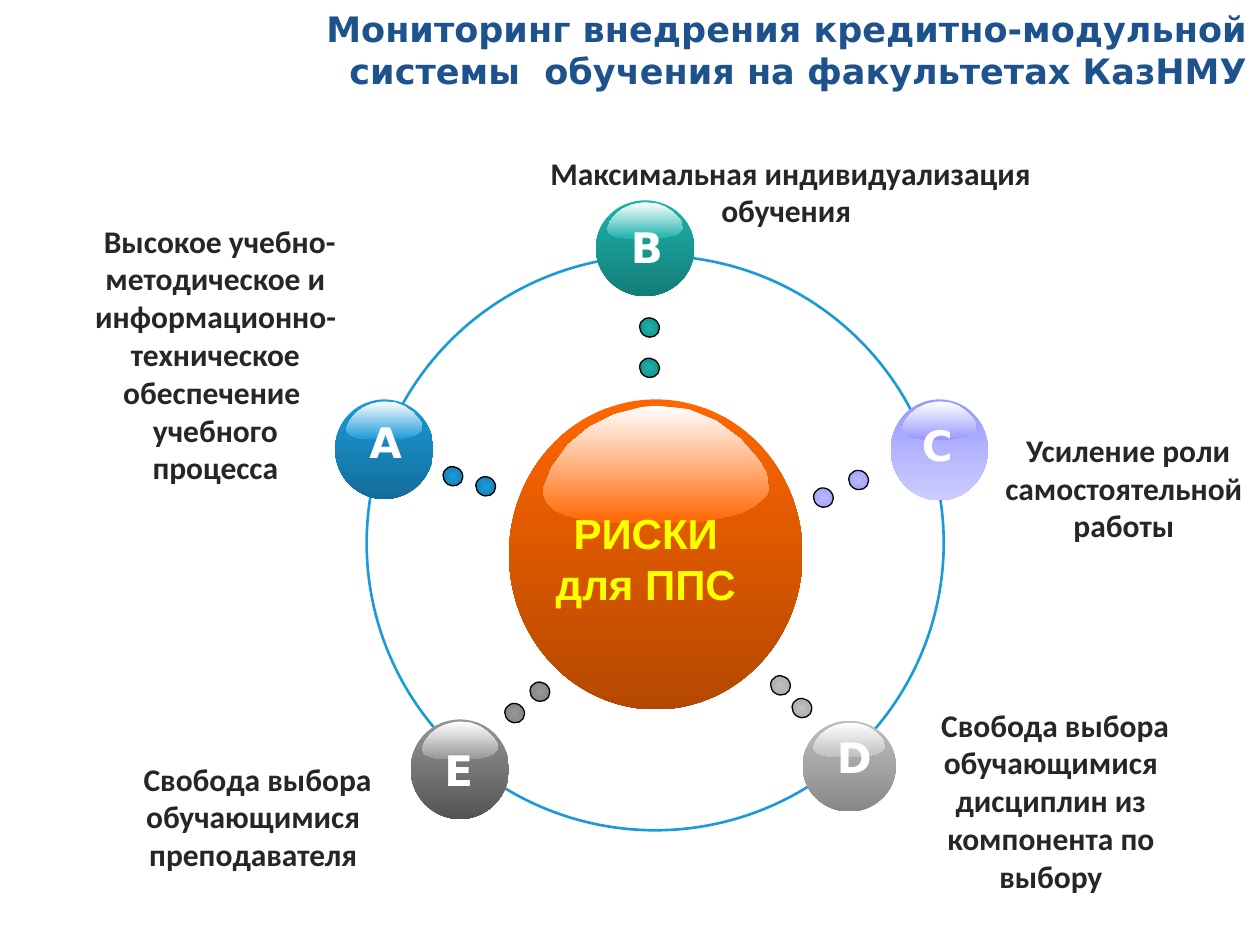
"""Builds a slide with a ring of five lettered benefits around the central risks sphere."""
from lxml.etree import SubElement
from pptx import Presentation
from pptx.dml.color import RGBColor
from pptx.enum.shapes import MSO_SHAPE
from pptx.enum.text import MSO_ANCHOR, PP_ALIGN
from pptx.oxml.ns import qn
from pptx.util import Inches, Pt

NAVY = RGBColor(0x1D, 0x52, 0x8D)
BLUE = RGBColor(0x1B, 0x9A, 0xD9)
TEAL = RGBColor(0x1D, 0xB3, 0xAC)
LILAC = RGBColor(0x99, 0x99, 0xFF)
PALE_LILAC = RGBColor(0xCC, 0xCC, 0xFF)
SOFT_LILAC = RGBColor(0xB9, 0xB9, 0xFF)
SILVER = RGBColor(0xC0, 0xC0, 0xC0)
GRAY = RGBColor(0x96, 0x96, 0x96)
ORANGE = RGBColor(0xFF, 0x66, 0x00)
YELLOW = RGBColor(0xFF, 0xFF, 0x00)
INK = RGBColor(0x26, 0x26, 0x26)
WHITE = RGBColor(0xFF, 0xFF, 0xFF)
BLACK = RGBColor(0, 0, 0)

TITLE = "Мониторинг внедрения кредитно-модульной системы  обучения на факультетах КазНМУ"
CENTER_LINES = ["РИСКИ", "для ППС"]
RING = (2.91, 2.03, 4.58, 4.56)
CORE = (4.04, 3.17, 2.33, 2.46)
CORE_TEXT = (4.3, 3.98, 1.65, 0.91)
DOT_SIZE = (0.15, 0.16)
DOT_ROTATION = 303.8

# stops are (colour, shade percent)
BENEFITS = [
    dict(letter="A", text="Высокое учебно-методическое и информационно-техническое обеспечение  учебного процесса",
         text_box=(0.63, 1.71, 2.16, 2.52), sphere=(2.66, 3.17, 0.78, 0.79),
         letter_box=(2.82, 3.26, 0.48, 0.53), stops=[(BLUE, 100), (BLUE, 46)],
         dot_stops=[(BLUE, 100), (BLUE, 55)], dots=[(3.52, 3.7), (3.78, 3.78)]),
    dict(letter="B", text="Максимальная индивидуализация обучения",
         text_box=(4.04, 1.17, 4.4, 1.01), sphere=(4.73, 1.59, 0.78, 0.76),
         letter_box=(4.9, 1.71, 0.47, 0.53), stops=[(TEAL, 100), (TEAL, 44)],
         dot_stops=[(TEAL, 100), (TEAL, 49)], dots=[(5.08, 2.52), (5.08, 2.84)]),
    dict(letter="C", text="Усиление роли самостоятельной работы",
         text_box=(7.84, 3.37, 2.16, 1.31), sphere=(7.07, 3.17, 0.77, 0.8),
         letter_box=(7.21, 3.28, 0.46, 0.53), stops=[(LILAC, 100), (PALE_LILAC, 100)],
         dot_stops=[(SOFT_LILAC, 100), (LILAC, 100)], dots=[(6.74, 3.73), (6.46, 3.87)]),
    dict(letter="D", text="Свобода выбора обучающимися дисциплин из компонента по выбору",
         text_box=(7.15, 5.55, 2.38, 1.92), sphere=(6.37, 5.72, 0.74, 0.72),
         letter_box=(6.53, 5.76, 0.5, 0.53), stops=[(SILVER, 100), (SILVER, 46)],
         dot_stops=[(SILVER, 100), (SILVER, 68)], dots=[(6.29, 5.54), (6.12, 5.36)]),
    dict(letter="E", text="Свобода выбора обучающимися преподавателя",
         text_box=(0.93, 5.98, 2.16, 1.01), sphere=(3.26, 5.71, 0.78, 0.79),
         letter_box=(3.42, 5.86, 0.44, 0.53), stops=[(GRAY, 100), (GRAY, 27)],
         dot_stops=[(GRAY, 100), (GRAY, 68)], dots=[(4.01, 5.58), (4.21, 5.41)]),
]

GLOSS_SIZE = (180, 93)
GLOSS_OUTLINE = [
    (178, 53), (180, 63), (180, 68), (177, 72), (169, 79), (157, 85), (141, 89),
    (123, 92), (109, 93), (65, 93), (48, 92), (32, 90), (20, 87), (10, 83),
    (3, 76), (0, 69), (1, 64), (7, 49), (20, 31), (37, 17), (57, 7), (80, 1),
    (91, 0), (116, 3), (138, 12), (157, 26), (172, 43),
]


def inches(box):
    return [Inches(length) for length in box]


def fill_gradient(shape, stops, radial=False):
    shape.fill.gradient()
    gradient = shape._element.spPr.find(qn("a:gradFill"))
    for child in list(gradient):
        gradient.remove(child)
    stop_list = SubElement(gradient, qn("a:gsLst"))
    for position, (color, shade) in zip((0, 100000), stops):
        stop = SubElement(stop_list, qn("a:gs"), pos=str(position))
        tone = SubElement(stop, qn("a:srgbClr"), val=str(color))
        if shade < 100:
            SubElement(tone, qn("a:shade"), val=str(shade * 1000))
    if radial:
        focus = SubElement(gradient, qn("a:path"), path="shape")
        SubElement(focus, qn("a:fillToRect"), l="50000", t="50000", r="50000", b="50000")
    else:
        SubElement(gradient, qn("a:lin"), ang="5400000", scaled="1")


def add_ellipse(shapes, box, line_color=None, line_width=0):
    ellipse = shapes.add_shape(MSO_SHAPE.OVAL, *inches(box))
    ellipse.shadow.inherit = False
    if line_color is None:
        ellipse.line.fill.background()
    else:
        ellipse.line.color.rgb = line_color
        ellipse.line.width = Pt(line_width)
    return ellipse


def add_sphere(shapes, box, stops):
    fill_gradient(add_ellipse(shapes, box), stops)
    left, top, width, height = box
    across, down = 0.77 * width / GLOSS_SIZE[0], 0.38 * height / GLOSS_SIZE[1]
    outline = [(Inches(left + 0.115 * width + x * across),
                Inches(top + 0.02 * height + y * down)) for x, y in GLOSS_OUTLINE]
    builder = shapes.build_freeform(*outline[0])
    builder.add_line_segments(outline[1:], close=True)
    gloss = builder.convert_to_shape()
    gloss.shadow.inherit = False
    gloss.line.fill.background()
    fill_gradient(gloss, [(WHITE, 100), stops[0]])


def style_run(run, font, size, color, bold=True):
    run.font.name, run.font.size, run.font.bold = font, Pt(size), bold
    run.font.color.rgb = color


def add_text(shapes, box, lines, font, size, color, wrap=False):
    frame = shapes.add_textbox(*inches(box)).text_frame
    frame.word_wrap = wrap
    frame.text = "\n".join(lines)
    for paragraph in frame.paragraphs:
        paragraph.alignment = PP_ALIGN.CENTER
        for run in paragraph.runs:
            style_run(run, font, size, color)
    return frame


def add_benefit_text(shapes, box, text):
    paragraph = add_text(shapes, box, [" "], "Arial", 18, BLACK, wrap=True).paragraphs[0]
    paragraph.runs[0].font.bold = False
    run = paragraph.add_run()
    run.text = text
    style_run(run, "Calibri", 18, INK)


def main():
    presentation = Presentation()
    presentation.slide_width, presentation.slide_height = Inches(10), Inches(7.5)
    slide = presentation.slides.add_slide(presentation.slide_layouts[5])
    shapes = slide.shapes

    title = shapes.title
    title.left, title.top, title.width, title.height = inches((1.41, 0, 8.59, 0.78))
    title.text_frame.text = TITLE
    title.text_frame.vertical_anchor = MSO_ANCHOR.MIDDLE
    heading = title.text_frame.paragraphs[0]
    heading.alignment = PP_ALIGN.RIGHT
    style_run(heading.runs[0], "DejaVu Sans", 20, NAVY)

    add_ellipse(shapes, RING, BLUE, 1.5).fill.background()
    add_sphere(shapes, CORE, [(ORANGE, 100), (ORANGE, 46)])
    add_text(shapes, CORE_TEXT, CENTER_LINES, "Arial", 24, YELLOW)

    for benefit in BENEFITS:
        add_sphere(shapes, benefit["sphere"], benefit["stops"])
        add_text(shapes, benefit["letter_box"], [benefit["letter"]], "DejaVu Sans", 24, WHITE)
        for corner in benefit["dots"]:
            dot = add_ellipse(shapes, corner + DOT_SIZE, BLACK, 0.75)
            dot.rotation = DOT_ROTATION
            fill_gradient(dot, benefit["dot_stops"], radial=True)
    for benefit in BENEFITS:
        add_benefit_text(shapes, benefit["text_box"], benefit["text"])

    presentation.save("out.pptx")


if __name__ == "__main__":
    main()
